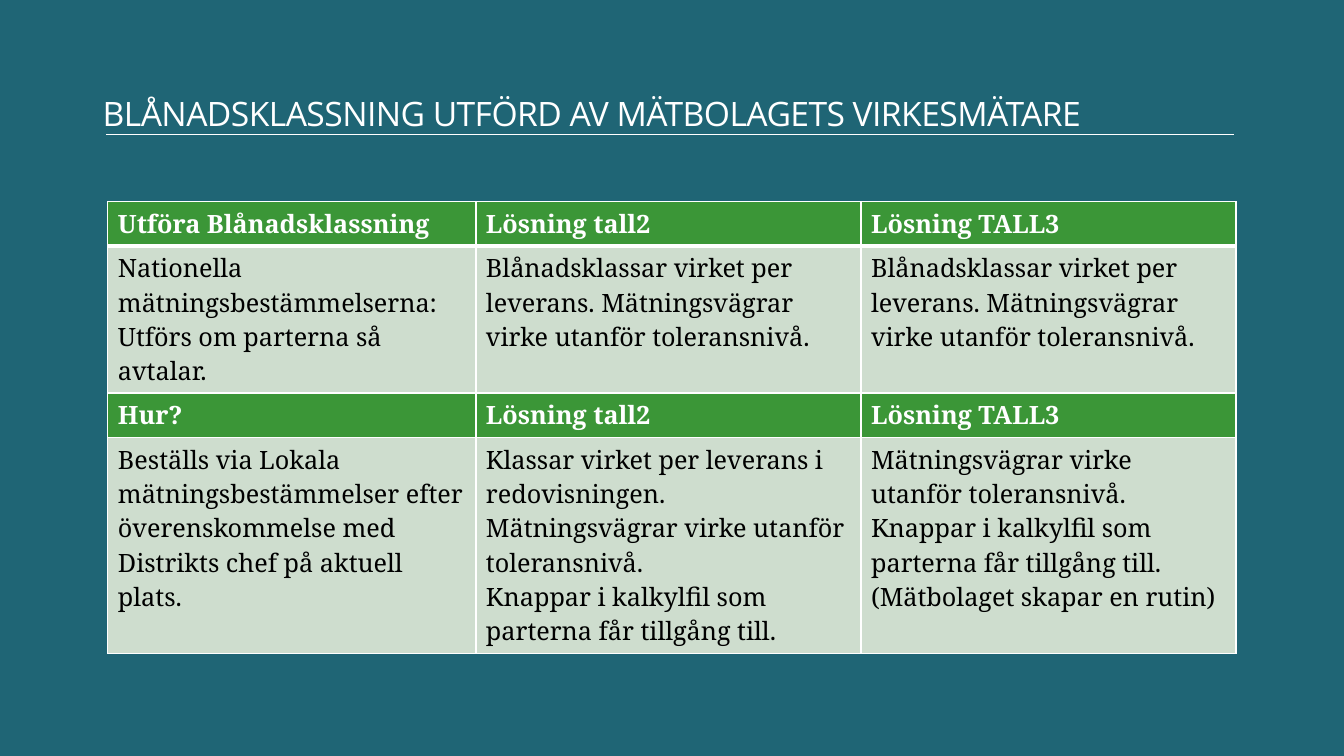
import pptx
import pptx.dml.color
import pptx.enum.shapes
import pptx.oxml
import pptx.oxml.ns
import pptx.util
from lxml import etree

Inches, Pt = pptx.util.Inches, pptx.util.Pt
COLORS = {"background": "1F6575", "heading": "3B9637", "body": "CEDDCE",
          "light": "FFFFFF", "dark": "000000"}
COLUMN_WIDTHS = [3.65, 3.82, 3.72]
ROW_HEIGHTS = [0.44, 1.46, 0.44, 2.14]
SOLUTIONS = ["Lösning tall2", "Lösning TALL3"]
PER_DELIVERY = "Blånadsklassar virket per leverans. Mätningsvägrar virke utanför toleransnivå."
BUTTONS = "Knappar i kalkylfil som parterna får tillgång till."
ROWS = [
    ["Utföra Blånadsklassning"] + SOLUTIONS,
    ["Nationella mätningsbestämmelserna: Utförs om parterna så avtalar.",
     PER_DELIVERY, PER_DELIVERY],
    ["Hur?"] + SOLUTIONS,
    ["Beställs via Lokala mätningsbestämmelser efter överenskommelse med "
     "Distrikts chef på aktuell plats.",
     "Klassar virket per leverans i redovisningen. Mätningsvägrar virke utanför "
     "toleransnivå.\n" + BUTTONS,
     "Mätningsvägrar virke utanför toleransnivå.\n" + BUTTONS
     + "\n(Mätbolaget skapar en rutin)"],
]


def rgb(name):
    return pptx.dml.color.RGBColor.from_string(COLORS[name])


def style_text(frame, font_name, size, color, bold=False):
    for paragraph in frame.paragraphs:
        for run in paragraph.runs:
            run.font.name = font_name
            run.font.size = Pt(size)
            run.font.bold = bold
            run.font.color.rgb = rgb(color)


deck = pptx.Presentation()
deck.slide_width, deck.slide_height = Inches(13.33), Inches(7.5)
slide = deck.slides.add_slide(deck.slide_layouts[6])
slide.background.fill.solid()
slide.background.fill.fore_color.rgb = rgb("background")

# Rule under the title
rule = slide.shapes.add_connector(
    pptx.enum.shapes.MSO_CONNECTOR.STRAIGHT,
    Inches(1.05), Inches(1.33), Inches(12.24), Inches(1.33))
rule.line.color.rgb = rgb("light")
rule.line.width = Pt(0.5)
etree.SubElement(rule._element.spPr, pptx.oxml.ns.qn("a:effectLst"))

# Title
title = slide.shapes.add_textbox(Inches(0.92), Inches(0.9), Inches(11.5), Inches(0.98))
title.text_frame.word_wrap = True
title.text_frame.text = "BLÅNADSKLASSNING UTFÖRD AV MÄTBOLAGETS VIRKESMÄTARE"
title.text_frame.paragraphs[0].line_spacing = 0.95
style_text(title.text_frame, "Open Sans", 24, "light")
title.text_frame.paragraphs[0].runs[0].font._element.set("spc", "-40")

# Table of tasks and solutions
comparison = slide.shapes.add_table(
    len(ROWS), len(COLUMN_WIDTHS), Inches(1.07), Inches(2),
    Inches(sum(COLUMN_WIDTHS)), Inches(sum(ROW_HEIGHTS))).table
for column, width in zip(comparison.columns, COLUMN_WIDTHS):
    column.width = Inches(width)

for r, (texts, height) in enumerate(zip(ROWS, ROW_HEIGHTS)):
    comparison.rows[r].height = Inches(height)
    is_heading = r % 2 == 0
    for c, text in enumerate(texts):
        cell = comparison.cell(r, c)
        cell.text_frame.text = text
        style_text(cell.text_frame, "Noto Serif", 18,
                   "light" if is_heading else "dark", is_heading)
        cell.fill.solid()
        cell.fill.fore_color.rgb = rgb("heading" if is_heading else "body")
        # White borders, thicker below the first row
        for place, side in enumerate("LRTB"):
            thick = (r, side) in [(0, "B"), (1, "T")]
            border = pptx.oxml.parse_xml(
                f'<a:ln{side} {pptx.oxml.ns.nsdecls("a")} w="{Pt(3 if thick else 1)}">'
                f'<a:solidFill><a:srgbClr val="{COLORS["light"]}"/></a:solidFill>'
                f'</a:ln{side}>')
            cell._tc.get_or_add_tcPr().insert(place, border)

deck.save("out.pptx")
